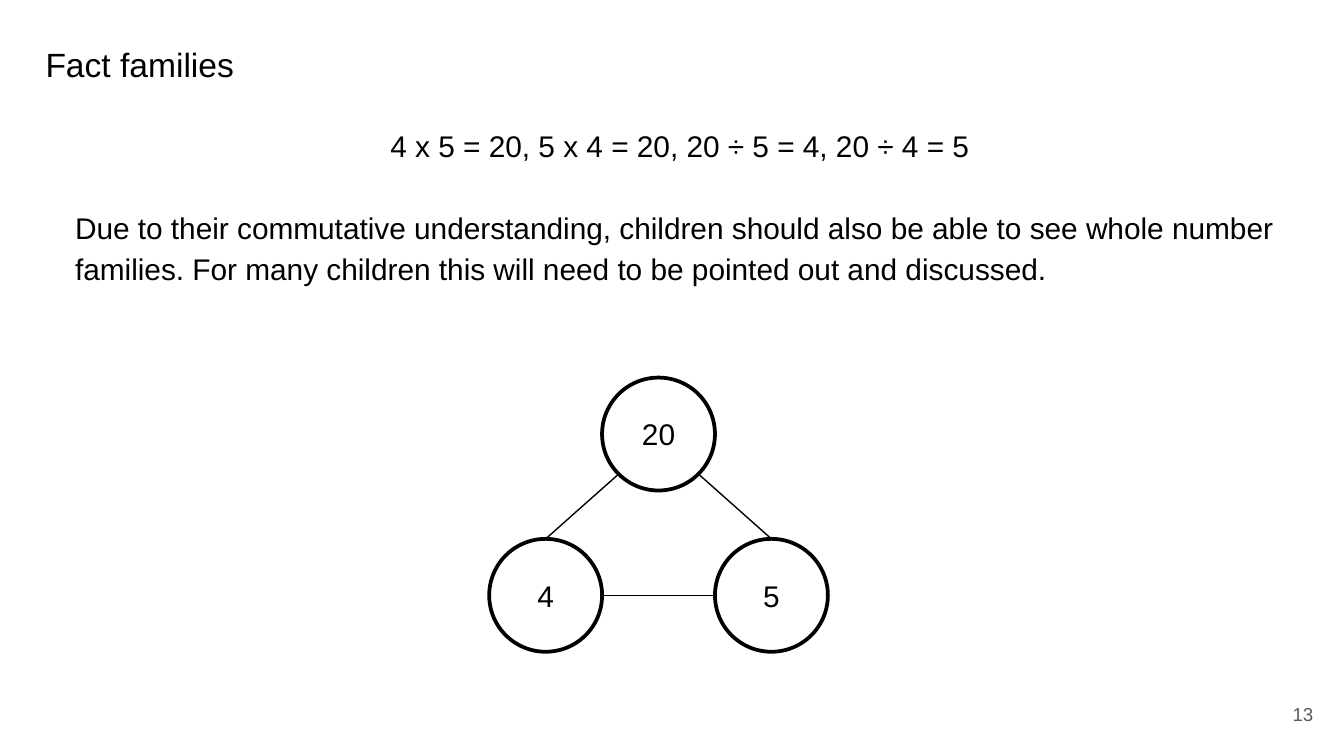
"""Build the fact families slide with its number triangle."""
from lxml import etree
from pptx import Presentation
from pptx import util as u
from pptx.dml.color import RGBColor
from pptx.enum import shapes, text
from pptx.oxml.ns import qn

WIDTH = 10
SIZE = 0.84
BLACK = "000000"


def paint(fmt, color):
    if hasattr(fmt, "solid"):
        fmt.solid()
        fmt.fore_color.rgb = RGBColor.from_string(color)
    else:
        fmt.rgb = RGBColor.from_string(color)


def write(para, words, size=16, color=BLACK, align="LEFT",
          indent=0, before=0, spacing=1.0):
    para.alignment = getattr(text.PP_ALIGN, align)
    if indent:
        props = para._p.get_or_add_pPr()
        props.set("marL", str(u.Inches(indent)))
        props.set("indent", "0")
    para.line_spacing = spacing
    para.space_before = u.Pt(before)
    run = para.add_run()
    run.text = words
    run.font.name = "Arial"
    run.font.size = u.Pt(size)
    paint(run.font.color, color)


def add_box(slide, left, top, width, height, anchor="TOP"):
    box = slide.shapes.add_textbox(*map(u.Inches, (left, top, width, height)))
    frame = box.text_frame
    frame.word_wrap = True
    frame.vertical_anchor = getattr(text.MSO_ANCHOR, anchor)
    frame.margin_left = frame.margin_right = u.Inches(0.1)
    frame.margin_top = frame.margin_bottom = u.Inches(0.1)
    return frame


def add_node(group, label, left, top):
    node = group.shapes.add_shape(
        shapes.MSO_SHAPE.OVAL, *map(u.Inches, (left, top, SIZE, SIZE)))
    node.shadow.inherit = False
    node.fill.background()
    paint(node.line.fill, BLACK)
    node.line.width = u.Pt(2)
    node.text_frame.vertical_anchor = text.MSO_ANCHOR.MIDDLE
    write(node.text_frame.paragraphs[0], label, align="CENTER")


def add_link(group, start, end):
    link = group.shapes.add_connector(
        shapes.MSO_CONNECTOR.STRAIGHT, *map(u.Inches, start + end))
    paint(link.line.fill, BLACK)
    link.line.width = u.Pt(0.75)
    etree.SubElement(link._element.spPr, qn("a:effectLst"))


def add_family(slide, whole, parts, mid=4.9, top=2.81, drop=1.2):
    group = slide.shapes.add_group_shape()
    half, base = SIZE / 2, top + drop
    add_node(group, whole, mid - half, top)
    for side, part in zip((-1, 1), parts):
        add_node(group, part, mid + side * SIZE - half, base)
    for side in (-1, 1):
        add_link(group, (mid + side * 0.3, top + 0.72),
                 (mid + side * SIZE, base))
    add_link(group, (mid - half, base + half), (mid + half, base + half))


def main():
    deck = Presentation()
    deck.slide_width = u.Inches(WIDTH)
    deck.slide_height = u.Inches(WIDTH * 9 / 16)
    slide = deck.slides.add_slide(deck.slide_layouts[6])

    title = add_box(slide, 0.24, 0.23, 9.32, 0.48)
    write(title.paragraphs[0], "Fact families", size=18)

    body = add_box(slide, 0.34, 0.81, 9.32, 1.4)
    write(body.paragraphs[0], "4 x 5 = 20, 5 x 4 = 20, 20 ÷ 5 = 4, 20 ÷ 4 = 5",
          align="CENTER", indent=0.12, spacing=1.15)
    write(body.add_paragraph(),
          "Due to their commutative understanding, children should also be "
          "able to see whole number families. For many children this will "
          "need to be pointed out and discussed.",
          indent=0.12, before=22, spacing=1.15)

    number = add_box(slide, 9.27, 5.1, 0.6, 0.43, anchor="MIDDLE")
    write(number.paragraphs[0], "13", size=10, color="595959", align="RIGHT")

    add_family(slide, "20", ("4", "5"))
    deck.save("out.pptx")


if __name__ == "__main__":
    main()
